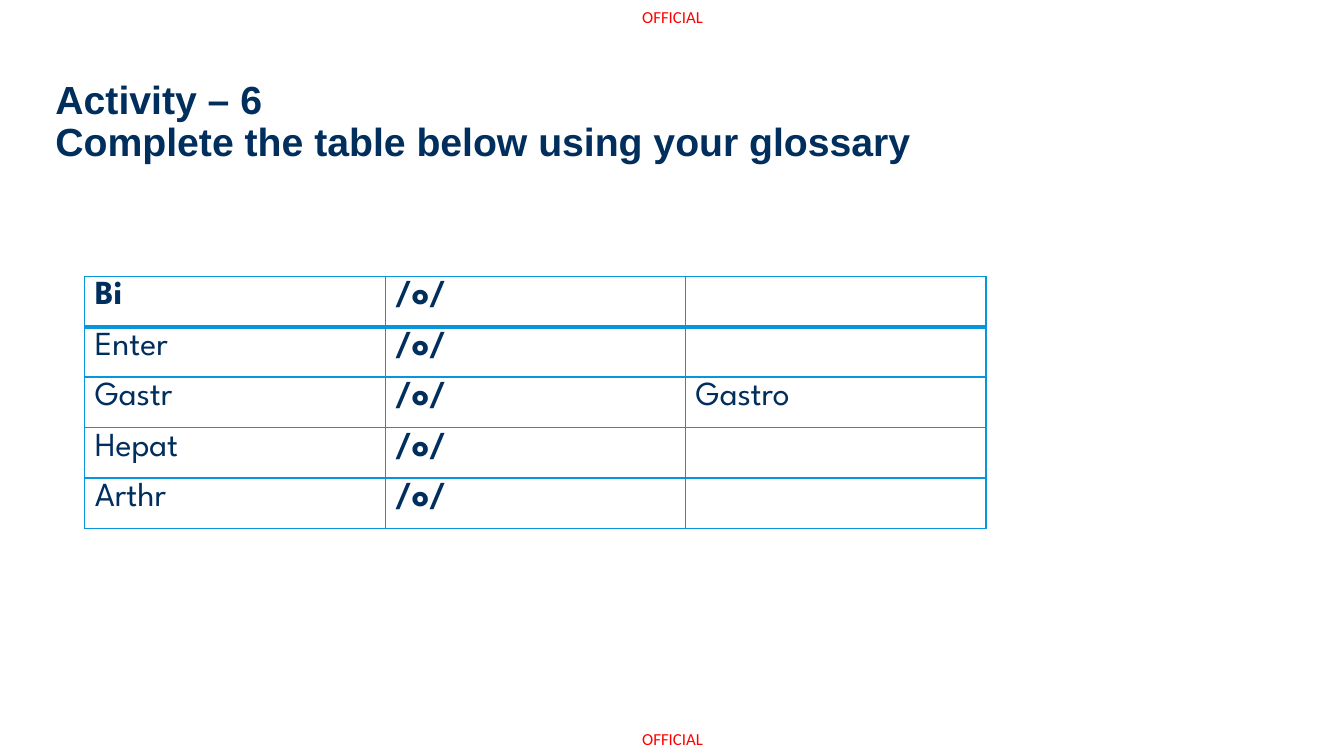
from lxml.etree import SubElement
from pptx import Presentation
from pptx.dml.color import RGBColor
from pptx.enum.text import MSO_ANCHOR, MSO_AUTO_SIZE, PP_ALIGN
from pptx.oxml.ns import qn
from pptx.util import Inches, Pt

# Content
TITLE_LINES = ["Activity – 6\u00a0", "Complete the table below using your glossary"]
MARKING = "OFFICIAL"
MARKING_TOPS = [0.07, 7.23]
GLOSSARY = [
    ("Bi", "/o/", ""),
    ("Enter", "/o/", ""),
    ("Gastr", "/o/", "Gastro"),
    ("Hepat", "/o/", ""),
    ("Arthr", "/o/", ""),
]
NAVY, BLUE, RED, WHITE = "002E5D", "0796DC", "FF0000", "FFFFFF"
COLUMN_WIDTH, ROW_HEIGHT = 2.98, 0.41


def color(value):
    return RGBColor.from_string(value)


def add_run(paragraph, text, font, size, ink, bold=False):
    run = paragraph.add_run()
    run.text = text
    run.font.name, run.font.size, run.font.bold = font, Pt(size), bold
    run.font.color.rgb = color(ink)


def clear_margins(frame):
    frame.margin_left = frame.margin_top = frame.margin_right = frame.margin_bottom = 0


def set_borders(cell, widths):
    properties = cell._tc.get_or_add_tcPr()
    for position, (side, width) in enumerate(widths.items()):
        line = properties.makeelement(qn(f"a:{side}"), {"w": str(Pt(width))})
        fill = SubElement(line, qn("a:solidFill"))
        SubElement(fill, qn("a:srgbClr"), val=BLUE)
        properties.insert(position, line)


presentation = Presentation()
presentation.slide_width, presentation.slide_height = Inches(13.33), Inches(7.5)
slide = presentation.slides.add_slide(presentation.slide_layouts[5])

# Markings at top and bottom
for top in MARKING_TOPS:
    marking = slide.shapes.add_textbox(Inches(6.37), Inches(top), Inches(0.64), Inches(0.2))
    frame = marking.text_frame
    clear_margins(frame)
    frame.word_wrap = False
    frame.auto_size = MSO_AUTO_SIZE.SHAPE_TO_FIT_TEXT
    add_run(frame.paragraphs[0], MARKING, "Calibri", 12, RED)

# Title
title = slide.shapes.title
title.left, title.top, title.width, title.height = map(Inches, (0.55, 0.8, 8.64, 0.79))
frame = title.text_frame
clear_margins(frame)
frame.word_wrap = True
frame.auto_size = MSO_AUTO_SIZE.NONE
frame.vertical_anchor = MSO_ANCHOR.TOP
heading = frame.paragraphs[0]
heading.alignment, heading.line_spacing = PP_ALIGN.LEFT, 0.9
for index, line in enumerate(TITLE_LINES):
    if index:
        heading.add_line_break()
    add_run(heading, line, "Arial", 28, NAVY, bold=True)

# Glossary table
row_count, column_count = len(GLOSSARY), len(GLOSSARY[0])
glossary = slide.shapes.add_table(
    row_count, column_count, Inches(0.84), Inches(2.74),
    Inches(COLUMN_WIDTH * column_count), Inches(ROW_HEIGHT * row_count)).table
for column in glossary.columns:
    column.width = Inches(COLUMN_WIDTH)
for row_index, terms in enumerate(GLOSSARY):
    glossary.rows[row_index].height = Inches(ROW_HEIGHT)
    for column_index, term in enumerate(terms):
        cell = glossary.cell(row_index, column_index)
        cell.fill.solid()
        cell.fill.fore_color.rgb = color(WHITE)
        set_borders(cell, {"lnL": 1, "lnR": 1, "lnT": 3 if row_index == 1 else 1,
                           "lnB": 3 if row_index == 0 else 1})
        if term:
            add_run(cell.text_frame.paragraphs[0], term, "League Spartan", 24, NAVY,
                    bold=row_index == 0 or column_index == 1)

presentation.save("out.pptx")
